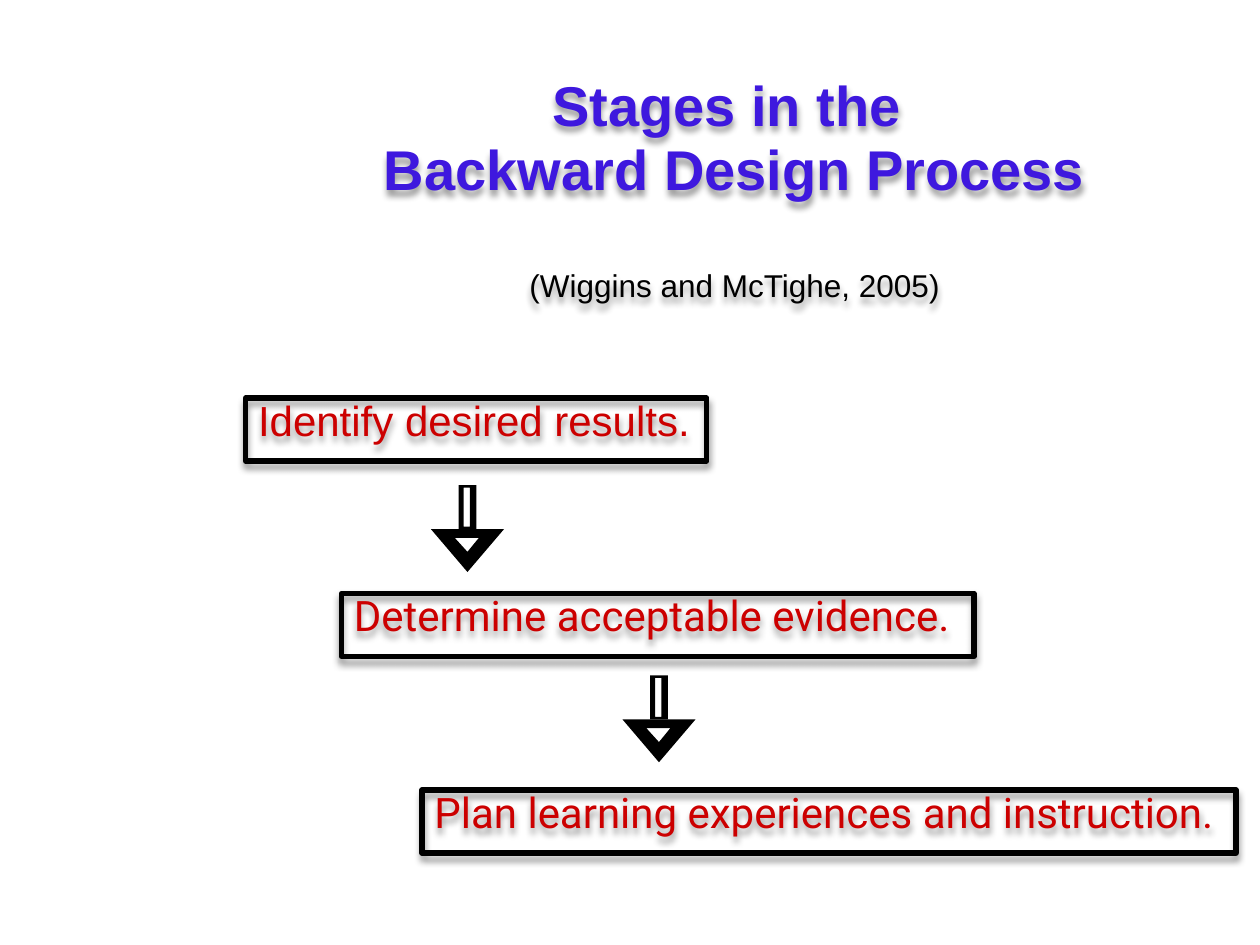
from lxml.etree import SubElement
from pptx import Presentation
from pptx.dml.color import RGBColor
from pptx.enum.shapes import MSO_SHAPE
from pptx.enum.text import MSO_ANCHOR, PP_ALIGN
from pptx.oxml.ns import qn
from pptx.util import Inches, Pt

BLACK, RED, VIOLET = "000000", "CC0000", "3E18DE"

# Text, left, top, width, font
STAGES = [
    ("Identify desired results.", 1.95, 3.16, 3.66, "Arial"),
    ("Determine acceptable evidence.", 2.71, 4.71, 5.02, "Roboto"),
    ("Plan learning experiences and instruction.", 3.35, 6.27, 6.46, "Roboto"),
]
STAGE_HEIGHT = 0.5

# Centre and top of each arrow
ARROWS = [(3.71, 3.85), (5.23, 5.36)]

# Outline and hole of the arrow parts, measured from the arrow's top centre
HEAD = [
    [(-0.29, 0.35), (0.29, 0.35), (0, 0.69)],
    [(-0.1, 0.42), (0, 0.53), (0.09, 0.42)],
]
SHAFT = [
    [(-0.07, 0), (0.07, 0), (0.07, 0.35), (-0.07, 0.35)],
    [(-0.03, 0.02), (-0.03, 0.33), (0.02, 0.33), (0.02, 0.02)],
]


def color(hex_string):
    return RGBColor.from_string(hex_string)


def add_shadow(shape):
    effects = SubElement(shape._element.spPr, qn("a:effectLst"))
    shadow = SubElement(effects, qn("a:outerShdw"), blurRad=str(Pt(4)),
                        dist=str(Pt(3)), dir="5400000", rotWithShape="0")
    black = SubElement(shadow, qn("a:srgbClr"), val=BLACK)
    SubElement(black, qn("a:alpha"), val="40000")


def format_paragraph(paragraph, size, font, hex_string, align, bold=False):
    paragraph.alignment = align
    paragraph.line_spacing = 0.8
    for run in paragraph.runs:
        run.font.size = Pt(size)
        run.font.name = font
        run.font.bold = bold
        run.font.color.rgb = color(hex_string)


def add_title(slide):
    title = slide.shapes.add_textbox(Inches(2.23), Inches(0.38), Inches(7.2), Inches(2.08))
    add_shadow(title)
    frame = title.text_frame
    frame.word_wrap = True
    frame.vertical_anchor = MSO_ANCHOR.BOTTOM
    frame.text = "Stages in the \nBackward Design Process\n(Wiggins and McTighe, 2005)"
    first, second, citation = frame.paragraphs
    for heading in (first, second):
        format_paragraph(heading, 32, "Arial", VIOLET, PP_ALIGN.CENTER, bold=True)
    format_paragraph(citation, 18, "Arial", BLACK, PP_ALIGN.CENTER)
    second.space_before = Pt(6.4)
    citation.space_before = Pt(41)


def add_stage(slide, text, left, top, width, font):
    stage = slide.shapes.add_shape(MSO_SHAPE.RECTANGLE, Inches(left), Inches(top),
                                   Inches(width), Inches(STAGE_HEIGHT))
    stage.fill.background()
    stage.line.color.rgb = color(BLACK)
    stage.line.width = Pt(3)
    add_shadow(stage)
    frame = stage.text_frame
    frame.word_wrap = True
    frame.vertical_anchor = MSO_ANCHOR.TOP
    frame.text = text
    format_paragraph(frame.paragraphs[0], 24, font, RED, PP_ALIGN.LEFT)


def add_arrow(slide, center, top):
    arrow = slide.shapes.add_group_shape()
    for contours in (HEAD, SHAFT):
        outline, hole = [[(Inches(center + x), Inches(top + y)) for x, y in contour]
                         for contour in contours]
        builder = arrow.shapes.build_freeform(*outline[0])
        builder.add_line_segments(outline[1:], close=True)
        builder.move_to(*hole[0])
        builder.add_line_segments(hole[1:], close=True)
        part = builder.convert_to_shape()
        part.shadow.inherit = False
        part.fill.solid()
        part.fill.fore_color.rgb = color(BLACK)
        part.line.fill.background()


def main():
    presentation = Presentation()
    presentation.slide_width = Inches(10)
    presentation.slide_height = Inches(7.5)
    slide = presentation.slides.add_slide(presentation.slide_layouts[6])

    # Heading and citation
    add_title(slide)

    # Stages, stepping down to the right
    for stage in STAGES:
        add_stage(slide, *stage)

    # Arrows between the stages
    for center, top in ARROWS:
        add_arrow(slide, center, top)

    presentation.save("out.pptx")


if __name__ == "__main__":
    main()
